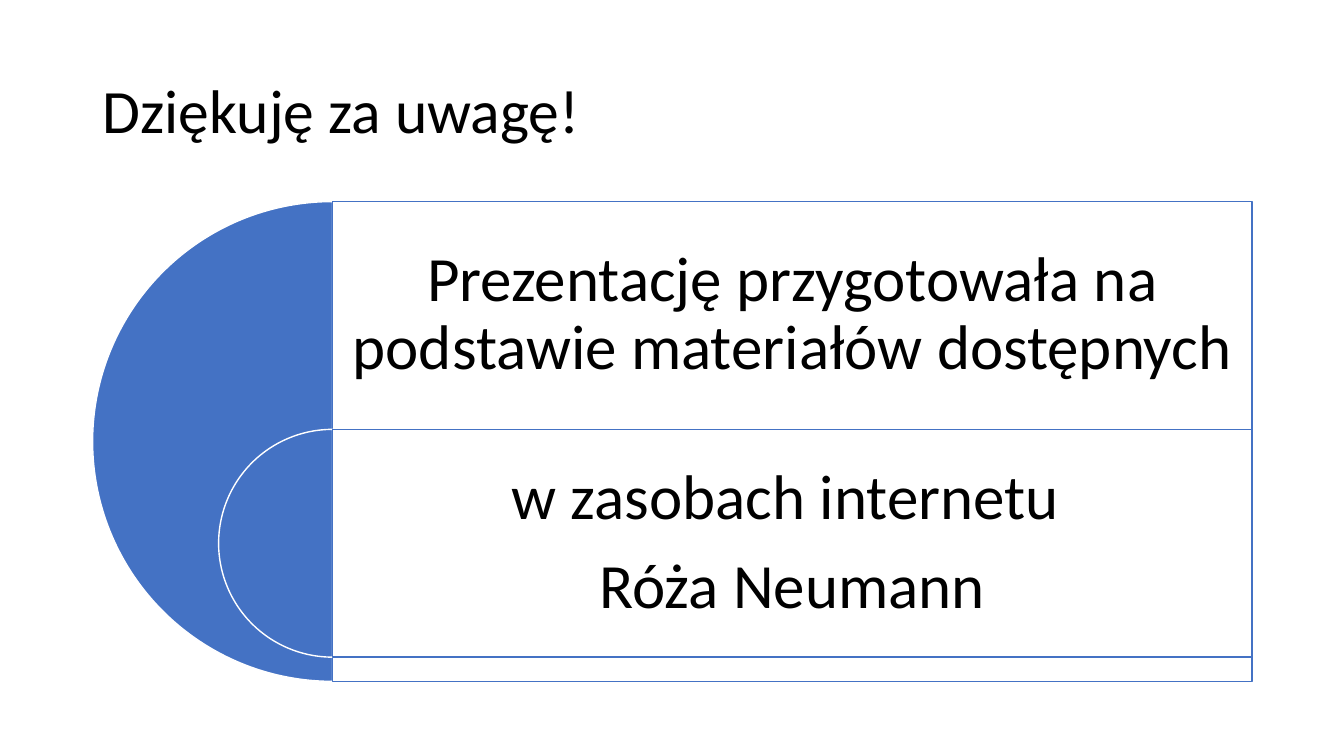
from dataclasses import dataclass

from lxml.etree import SubElement
from pptx import Presentation
from pptx.dml.color import RGBColor
from pptx.enum.shapes import MSO_SHAPE as Preset
from pptx.enum.text import MSO_ANCHOR as Anchor, PP_ALIGN as Align
from pptx.oxml.ns import qn
from pptx.shapes.autoshape import Shape
from pptx.slide import Slide
from pptx.util import Cm, Pt

BLUE = RGBColor(0x44, 0x72, 0xC4)
WHITE = RGBColor(0xFF, 0xFF, 0xFF)
BLACK = RGBColor(0x00, 0x00, 0x00)
FONT = "Calibri"

AXIS = 8.38
TOP = 5.08
PANEL_WIDTH = 23.17
ROW_HEIGHT = 5.74
TEXT_INSET = Cm(0.48)


@dataclass(frozen=True)
class Section:
    diameter: float
    lines: tuple[str, ...]


SECTIONS = (
    Section(12.09, ("Prezentację przygotowała na podstawie materiałów dostępnych ",)),
    Section(ROW_HEIGHT, ("w zasobach internetu ", "Róża Neumann")),
)


def style_paragraph(para, size: float, align: Align) -> None:
    para.alignment = align
    para.line_spacing = 0.9
    para.font.name = FONT
    para.font.size = Pt(size)
    para.font.color.rgb = BLACK


def paint(shape: Shape, fill: RGBColor, line: RGBColor) -> None:
    shape.shadow.inherit = False
    shape.fill.solid()
    shape.fill.fore_color.rgb = fill
    shape.line.color.rgb = line
    shape.line.width = Pt(1)


def add_title(page: Slide, text: str) -> None:
    title = page.shapes.title
    title.left, title.top, title.width, title.height = Cm(2.33), Cm(1.02), Cm(29.21), Cm(3.68)
    title.text_frame.text = text
    title.text_frame.vertical_anchor = Anchor.MIDDLE
    style_paragraph(title.text_frame.paragraphs[0], 44, Align.LEFT)


def add_half_disc(page: Slide, top: float, diameter: float) -> None:
    disc = page.shapes.add_shape(
        Preset.PIE, Cm(AXIS - diameter / 2), Cm(top), Cm(diameter), Cm(diameter))
    disc.adjustments[0] = 54
    disc.adjustments[1] = 162
    paint(disc, BLUE, WHITE)


def add_panel(page: Slide, top: float, height: float) -> None:
    panel = page.shapes.add_shape(
        Preset.RECTANGLE, Cm(AXIS), Cm(top), Cm(PANEL_WIDTH), Cm(height))
    paint(panel, WHITE, BLUE)
    color = panel.fill._xPr.find(qn("a:solidFill"))[0]
    SubElement(color, qn("a:alpha"), val="90000")


def add_text(page: Slide, top: float, lines: tuple[str, ...]) -> None:
    box = page.shapes.add_textbox(Cm(AXIS), Cm(top), Cm(PANEL_WIDTH), Cm(ROW_HEIGHT))
    frame = box.text_frame
    frame.word_wrap = True
    frame.vertical_anchor = Anchor.MIDDLE
    frame.margin_left = frame.margin_right = TEXT_INSET
    frame.margin_top = frame.margin_bottom = TEXT_INSET
    frame.text = "\n".join(lines)
    for para in frame.paragraphs:
        style_paragraph(para, 45, Align.CENTER)
        para.space_after = Pt(15)


def main() -> None:
    deck = Presentation()
    deck.slide_width, deck.slide_height = Cm(33.87), Cm(19.05)
    page = deck.slides.add_slide(deck.slide_layouts[5])
    add_title(page, "Dziękuję za uwagę!")
    for row, section in enumerate(SECTIONS):
        top = TOP + row * ROW_HEIGHT
        add_half_disc(page, top, section.diameter)
        add_panel(page, top, section.diameter)
        add_text(page, top, section.lines)
    deck.save("out.pptx")


if __name__ == "__main__":
    main()
